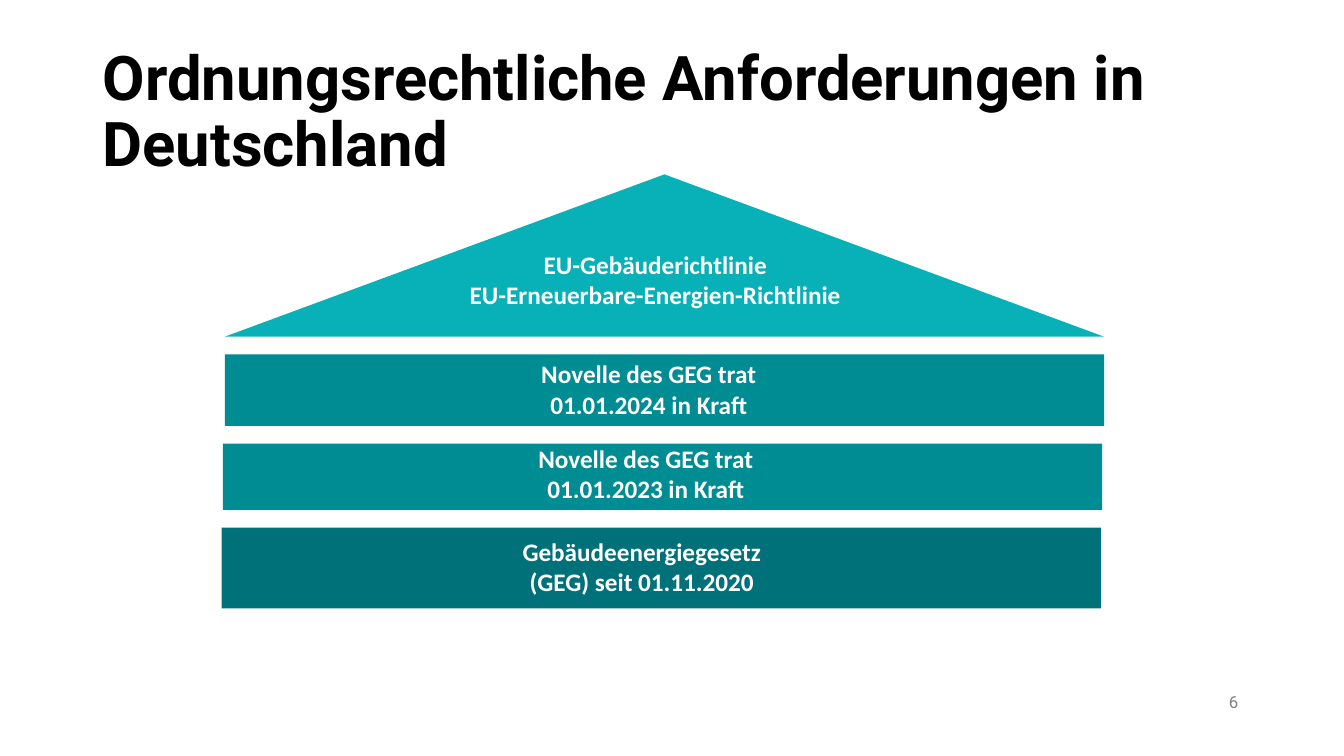
"""Build the slide on German building-energy rules, drawn as a house of stacked floors."""
from dataclasses import dataclass

from pptx import Presentation
from pptx.dml.color import RGBColor
from pptx.enum.shapes import MSO_SHAPE
from pptx.enum.text import MSO_ANCHOR, PP_ALIGN
from pptx.slide import Slide
from pptx.util import Emu, Inches, Pt

TRIANGLE, RECTANGLE = MSO_SHAPE.ISOSCELES_TRIANGLE, MSO_SHAPE.RECTANGLE
LEFT, CENTER, RIGHT = PP_ALIGN.LEFT, PP_ALIGN.CENTER, PP_ALIGN.RIGHT
TOP, MIDDLE = MSO_ANCHOR.TOP, MSO_ANCHOR.MIDDLE

SLIDE_WIDTH, SLIDE_HEIGHT = Inches(13.33), Inches(7.5)
HOUSE_TOP, HOUSE_WIDTH, FLOOR_GAP = 23.07, 65.42, 2.33
LABEL_HEIGHT = 9.47


@dataclass(frozen=True)
class Theme:
    """Colours, fonts and type sizes of the slide."""
    roof: str = "08B1B7"
    storey: str = "008C93"
    base: str = "007178"
    title: str = "000000"
    label: str = "FFFFFF"
    number: str = "808080"
    heading_font: str = "Roboto"
    label_font: str = "Calibri"
    title_size: int = 44
    label_size: int = 18
    number_size: int = 12


@dataclass(frozen=True)
class Area:
    """Rectangle in percent of the slide's width and height."""
    left: float
    top: float
    width: float
    height: float

    def lengths(self) -> tuple[Emu, Emu, Emu, Emu]:
        """Return left, top, width and height as slide lengths."""
        return (Emu(round(SLIDE_WIDTH * self.left / 100)),
                Emu(round(SLIDE_HEIGHT * self.top / 100)),
                Emu(round(SLIDE_WIDTH * self.width / 100)),
                Emu(round(SLIDE_HEIGHT * self.height / 100)))


@dataclass(frozen=True)
class Style:
    """Look of one text."""
    font: str
    size: int
    color: str
    bold: bool
    align: PP_ALIGN
    anchor: MSO_ANCHOR = TOP
    line_spacing: float = 1.0


@dataclass(frozen=True)
class Floor:
    """One part of the house; the label drop counts from the floor's top."""
    outline: MSO_SHAPE
    color: str
    left: float
    height: float
    label: str
    label_left: float
    label_drop: float
    label_width: float


THEME = Theme()
TITLE = Style(THEME.heading_font, THEME.title_size, THEME.title, True, LEFT, MIDDLE, 0.9)
LABEL = Style(THEME.label_font, THEME.label_size, THEME.label, True, CENTER)
NUMBER = Style(THEME.heading_font, THEME.number_size, THEME.number, False, RIGHT)

FLOORS = (
    Floor(TRIANGLE, THEME.roof, 16.73, 21.47,
          "EU-Gebäuderichtlinie\nEU-Erneuerbare-Energien-Richtlinie", 22.43, 9.2, 52.66),
    Floor(RECTANGLE, THEME.storey, 16.73, 9.47,
          "Novelle des GEG trat 01.01.2024 in Kraft", 36.83, -0.07, 22.88),
    Floor(RECTANGLE, THEME.storey, 16.58, 8.8,
          "Novelle des GEG trat 01.01.2023 in Kraft", 36.61, -0.67, 22.88),
    Floor(RECTANGLE, THEME.base, 16.5, 10.67,
          "Gebäudeenergiegesetz (GEG) seit 01.11.2020", 37.96, 0.47, 19.58),
)


def add_text(slide: Slide, text: str, area: Area, style: Style) -> None:
    """Add a wrapping text box in the given style."""
    frame = slide.shapes.add_textbox(*area.lengths()).text_frame
    frame.word_wrap = True
    frame.vertical_anchor = style.anchor
    frame.text = text
    for paragraph in frame.paragraphs:
        paragraph.alignment = style.align
        paragraph.line_spacing = style.line_spacing
        for run in paragraph.runs:
            run.font.name = style.font
            run.font.size = Pt(style.size)
            run.font.bold = style.bold
            run.font.color.rgb = RGBColor.from_string(style.color)


def add_floor(slide: Slide, floor: Floor, top: float) -> None:
    """Draw one floor and its label."""
    area = Area(floor.left, top, HOUSE_WIDTH, floor.height)
    body = slide.shapes.add_shape(floor.outline, *area.lengths())
    body.shadow.inherit = False
    body.fill.solid()
    body.fill.fore_color.rgb = RGBColor.from_string(floor.color)
    body.line.fill.background()
    label_area = Area(floor.label_left, top + floor.label_drop, floor.label_width, LABEL_HEIGHT)
    add_text(slide, floor.label, label_area, LABEL)


def main() -> None:
    """Build and save the slide."""
    deck = Presentation()
    deck.slide_width, deck.slide_height = SLIDE_WIDTH, SLIDE_HEIGHT
    slide = deck.slides.add_slide(deck.slide_layouts[6])
    add_text(slide, "Ordnungsrechtliche Anforderungen in Deutschland",
             Area(6.9, 5.33, 86.27, 19.33), TITLE)
    top = HOUSE_TOP
    for floor in FLOORS:
        add_floor(slide, floor, top)
        top += floor.height + FLOOR_GAP
    add_text(slide, "6", Area(70.37, 90.8, 22.5, 5.33), NUMBER)
    deck.save("out.pptx")


if __name__ == "__main__":
    main()
